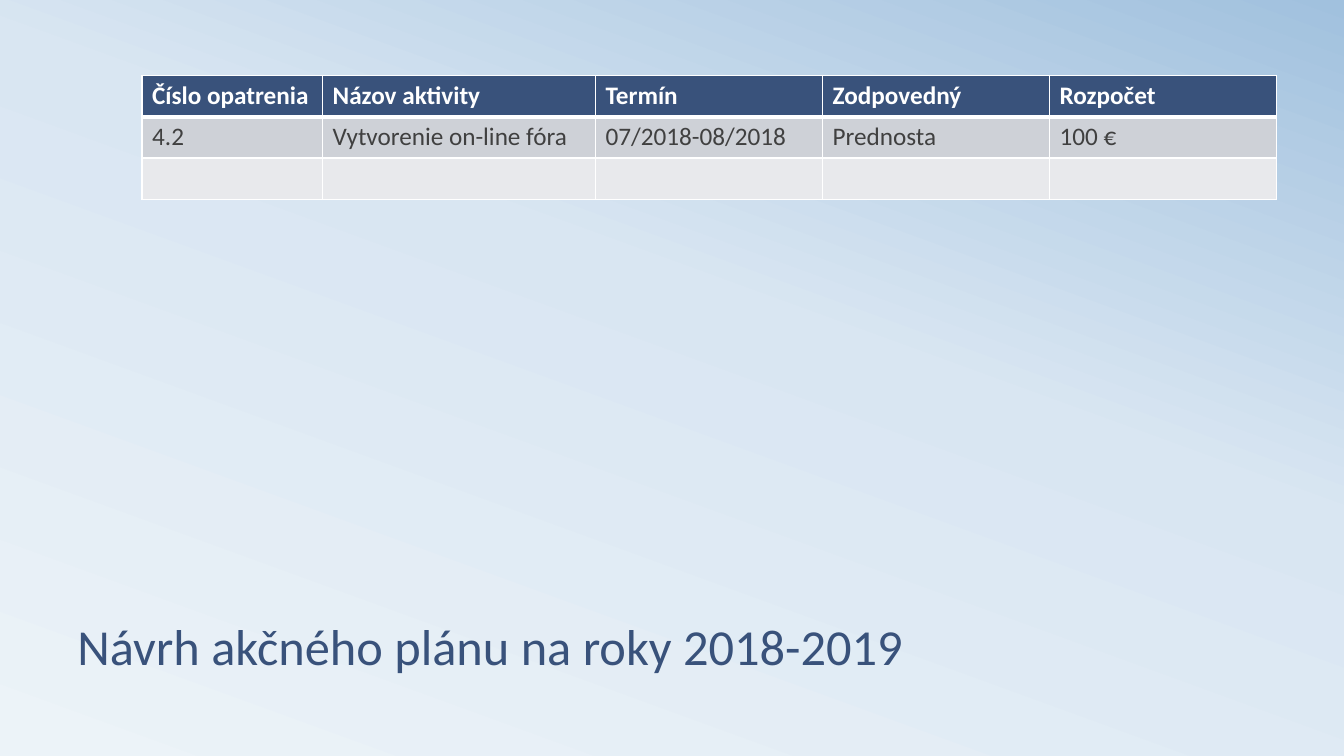
import copy
from dataclasses import dataclass

import pptx
import pptx.dml.color
import pptx.enum.text
import pptx.oxml
import pptx.oxml.ns
import pptx.slide
import pptx.table
import pptx.util

Cm = pptx.util.Cm
Pt = pptx.util.Pt
RGB = pptx.dml.color.RGBColor

NAVY = RGB(0x39, 0x52, 0x7B)
WHITE = RGB(0xFF, 0xFF, 0xFF)
GRAY = RGB(0x40, 0x40, 0x40)
BAND = RGB(0xCE, 0xD1, 0xD7)
PALE = RGB(0xE8, 0xE9, 0xEC)
MIST = RGB(0xEC, 0xF3, 0xF8)
HAZE = RGB(0xD9, 0xE6, 0xF2)
SKY = RGB(0xA1, 0xC1, 0xDE)
FONT = "Calibri"


@dataclass(frozen=True)
class Row:
    texts: tuple[str, ...]
    fill: RGB
    ink: RGB
    bold: bool = False
    top: int = 1
    base: int = 1


ROWS = (
    Row(("Číslo opatrenia", "Názov aktivity", "Termín", "Zodpovedný", "Rozpočet"),
        NAVY, WHITE, bold=True, base=3),
    Row(("4.2", "Vytvorenie on-line fóra", "07/2018-08/2018", "Prednosta", "100 €"),
        BAND, GRAY, top=3),
    Row(("",) * 5, PALE, GRAY),
)
WIDTHS = (4.55, 6.88, 5.72, 5.72, 5.72)
HEIGHT = 1.04


def paint_back(slide: pptx.slide.Slide) -> None:
    fill = slide.background.fill
    fill.gradient()
    fill.gradient_angle = 70
    stops = slide.element.find(".//" + pptx.oxml.ns.qn("a:gsLst"))
    stops.append(copy.deepcopy(stops[-1]))
    for stop, spot, color in zip(fill.gradient_stops, (0, 0.58, 1), (MIST, HAZE, SKY)):
        stop.position = spot
        stop.color.rgb = color


def set_font(font: pptx.text.text.Font, size: int, color: RGB, bold: bool) -> None:
    font.name = FONT
    font.size = Pt(size)
    font.color.rgb = color
    font.bold = bold


def draw_edge(cell: pptx.table._Cell, side: str, width: int) -> None:
    edge = pptx.oxml.parse_xml(
        f'<a:ln{side} {pptx.oxml.ns.nsdecls("a")} w="{Pt(width)}">'
        f'<a:solidFill><a:srgbClr val="{WHITE}"/></a:solidFill></a:ln{side}>'
    )
    cell._tc.get_or_add_tcPr().append(edge)


def fill_cell(cell: pptx.table._Cell, text: str, row: Row) -> None:
    for side, width in (("L", 1), ("R", 1), ("T", row.top), ("B", row.base)):
        draw_edge(cell, side, width)
    cell.fill.solid()
    cell.fill.fore_color.rgb = row.fill
    cell.text = text
    set_font(cell.text_frame.paragraphs[0].font, 18, row.ink, row.bold)


def add_plan(slide: pptx.slide.Slide) -> None:
    table = slide.shapes.add_table(
        len(ROWS), len(WIDTHS), Cm(3.58), Cm(1.9),
        Cm(sum(WIDTHS)), Cm(HEIGHT * len(ROWS)),
    ).table
    for column, width in zip(table.columns, WIDTHS):
        column.width = Cm(width)
    for line, row in zip(table.rows, ROWS):
        line.height = Cm(HEIGHT)
        for cell, text in zip(line.cells, row.texts):
            fill_cell(cell, text, row)


def add_title(slide: pptx.slide.Slide, text: str) -> None:
    frame = slide.shapes.add_textbox(Cm(1.7), Cm(14.17), Cm(30.48), Cm(2.97)).text_frame
    frame.word_wrap = True
    frame.vertical_anchor = pptx.enum.text.MSO_ANCHOR.BOTTOM
    title = frame.paragraphs[0]
    title.text = text
    title.line_spacing = 0.8
    set_font(title.font, 36, NAVY, False)


def main() -> None:
    deck = pptx.Presentation()
    deck.slide_width = Cm(33.87)
    deck.slide_height = Cm(19.05)
    slide = deck.slides.add_slide(deck.slide_layouts[6])
    paint_back(slide)
    add_title(slide, "Návrh akčného plánu na roky 2018-2019")
    add_plan(slide)
    deck.save("out.pptx")


if __name__ == "__main__":
    main()
